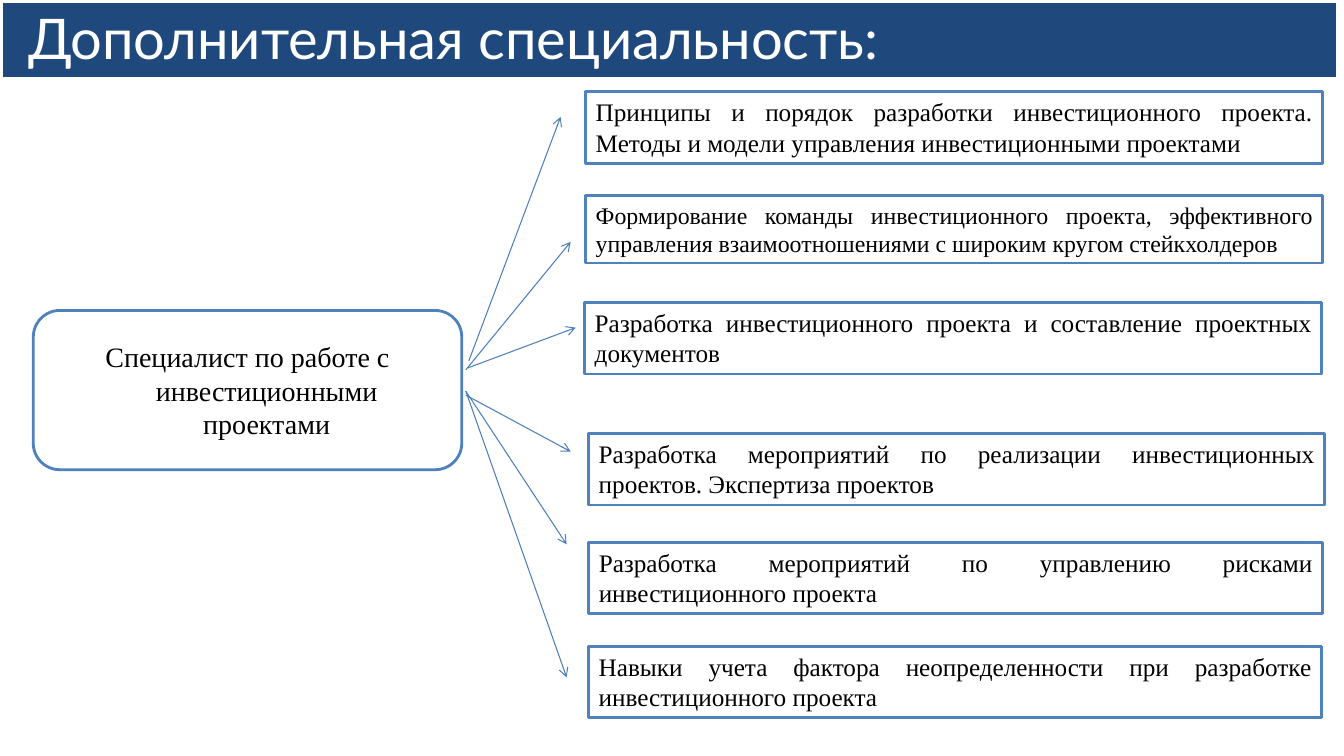
"""Build a slide linking an additional specialty to its six areas of training."""
from pptx import Presentation
from pptx.dml.color import RGBColor
from pptx.enum.shapes import MSO_CONNECTOR as Connector, MSO_SHAPE as Shape
from pptx.enum.text import MSO_ANCHOR as Anchor, MSO_AUTO_SIZE as AutoSize, PP_ALIGN as Align
from pptx.oxml.ns import qn
from pptx.util import Inches, Pt
from lxml import etree

NAVY = RGBColor(0x1F, 0x49, 0x7D)
BLUE = RGBColor(0x4F, 0x81, 0xBD)
ARROW_BLUE = RGBColor(0x4B, 0x7E, 0xBC)
WHITE = RGBColor(0xFF, 0xFF, 0xFF)
BLACK = RGBColor(0, 0, 0)


def add_text(frame, text, size, font_name, color, alignment):
    frame.word_wrap = True
    paragraph = frame.paragraphs[0]
    paragraph.alignment = alignment
    run = paragraph.add_run()
    run.text = text
    run.font.size = Pt(size)
    run.font.name = font_name
    run.font.color.rgb = color
    return paragraph


def add_box(kind, left, top, width, height, text, size, alignment):
    shape = slide.shapes.add_shape(kind, Inches(left), Inches(top), Inches(width), Inches(height))
    shape.shadow.inherit = False
    shape.fill.solid()
    shape.fill.fore_color.rgb = WHITE
    shape.line.color.rgb = BLUE
    shape.line.width = Pt(2)
    return shape, add_text(shape.text_frame, text, size, "Times New Roman", BLACK, alignment)


presentation = Presentation()
presentation.slide_width = Inches(13.33)
presentation.slide_height = Inches(7.5)
slide = presentation.slides.add_slide(presentation.slide_layouts[5])

title = slide.shapes.title
title.left, title.top = Inches(0.03), Inches(0.03)
title.width, title.height = Inches(13.22), Inches(0.67)
title.fill.solid()
title.fill.fore_color.rgb = NAVY
title_frame = title.text_frame
title_frame.margin_left = Inches(0.25)
title_frame.margin_right = title_frame.margin_top = title_frame.margin_bottom = 0
title_frame.vertical_anchor = Anchor.TOP
title_frame.auto_size = AutoSize.SHAPE_TO_FIT_TEXT
add_text(title_frame, "Дополнительная специальность:", 40, "Lato", WHITE, Align.LEFT)

specialist, specialist_paragraph = add_box(
    Shape.ROUNDED_RECTANGLE, 0.33, 3.08, 4.25, 1.58,
    "Специалист по работе с инвестиционными проектами", 20, Align.CENTER)
specialist.text_frame.vertical_anchor = Anchor.MIDDLE
properties = specialist_paragraph._p.get_or_add_pPr()
properties.set("marL", str(Inches(0.38)))
properties.set("indent", str(-Inches(0.38)))

skills = [
    (5.81, 0.91, 7.31, 0.71, 18, "Принципы и порядок разработки инвестиционного проекта. "
     "Методы и модели управления инвестиционными проектами"),
    (5.81, 1.94, 7.31, 0.67, 17, "Формирование команды инвестиционного проекта, эффективного "
     "управления взаимоотношениями с широким кругом стейкхолдеров"),
    (5.8, 3, 7.31, 0.71, 18, "Разработка инвестиционного проекта и составление проектных документов"),
    (5.84, 4.3, 7.3, 0.71, 18, "Разработка мероприятий по реализации инвестиционных проектов. "
     "Экспертиза проектов"),
    (5.84, 5.38, 7.28, 0.71, 18, "Разработка мероприятий по управлению рисками инвестиционного проекта"),
    (5.84, 6.41, 7.27, 0.71, 18, "Навыки учета фактора неопределенности при разработке "
     "инвестиционного проекта"),
]
for left, top, width, height, size, text in skills:
    skill, _ = add_box(Shape.RECTANGLE, left, top, width, height, text, size, Align.JUSTIFY)
    skill.text_frame.vertical_anchor = Anchor.TOP
    skill.text_frame.auto_size = AutoSize.SHAPE_TO_FIT_TEXT

arrows = [
    (4.65, 3.58, 5.56, 1.16),
    (4.62, 3.67, 5.66, 2.4),
    (4.64, 3.65, 5.71, 3.25),
    (4.62, 3.92, 5.66, 4.48),
    (4.62, 3.88, 5.62, 5.4),
    (4.62, 3.88, 5.62, 6.72),
]
for ends in arrows:
    arrow = slide.shapes.add_connector(Connector.STRAIGHT, *[Inches(value) for value in ends])
    arrow.line.color.rgb = ARROW_BLUE
    arrow.line.width = Pt(0.75)
    etree.SubElement(arrow.line._get_or_add_ln(), qn("a:tailEnd"), type="arrow")
    etree.SubElement(arrow._element.spPr, qn("a:effectLst"))

presentation.save("out.pptx")
